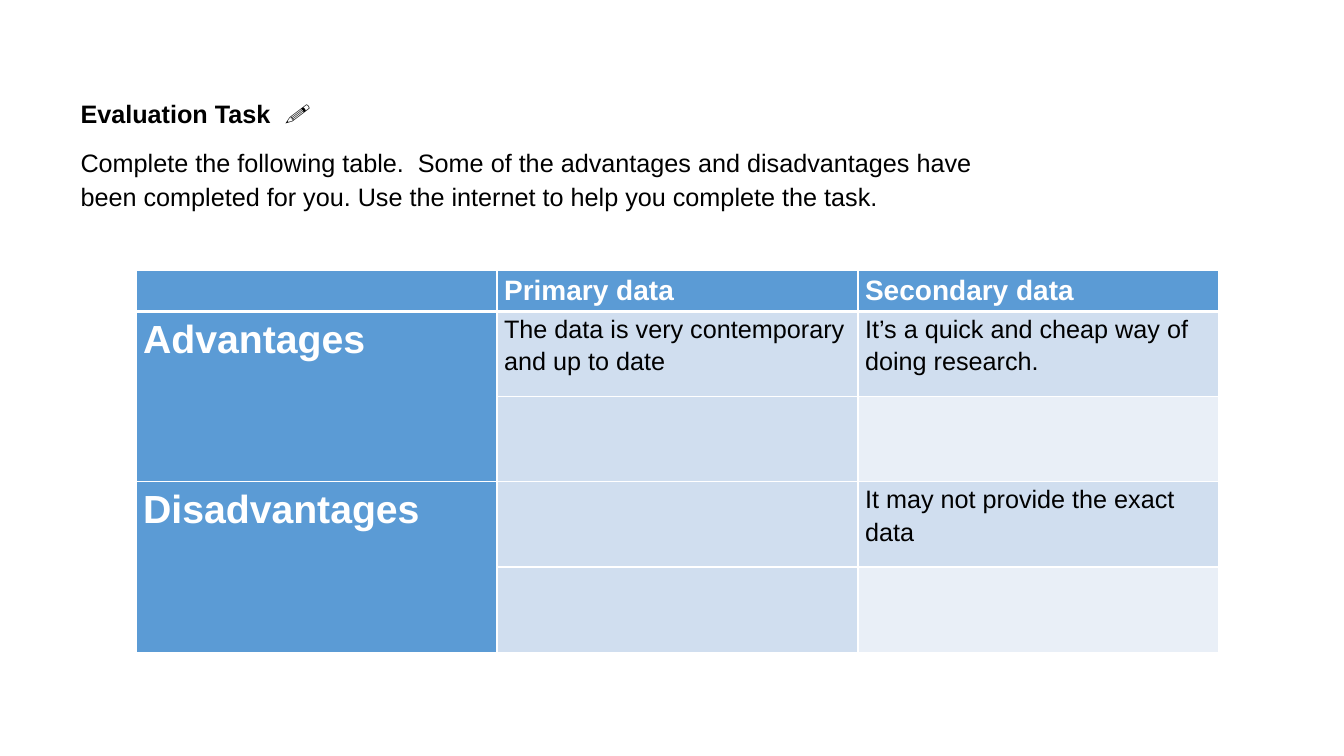
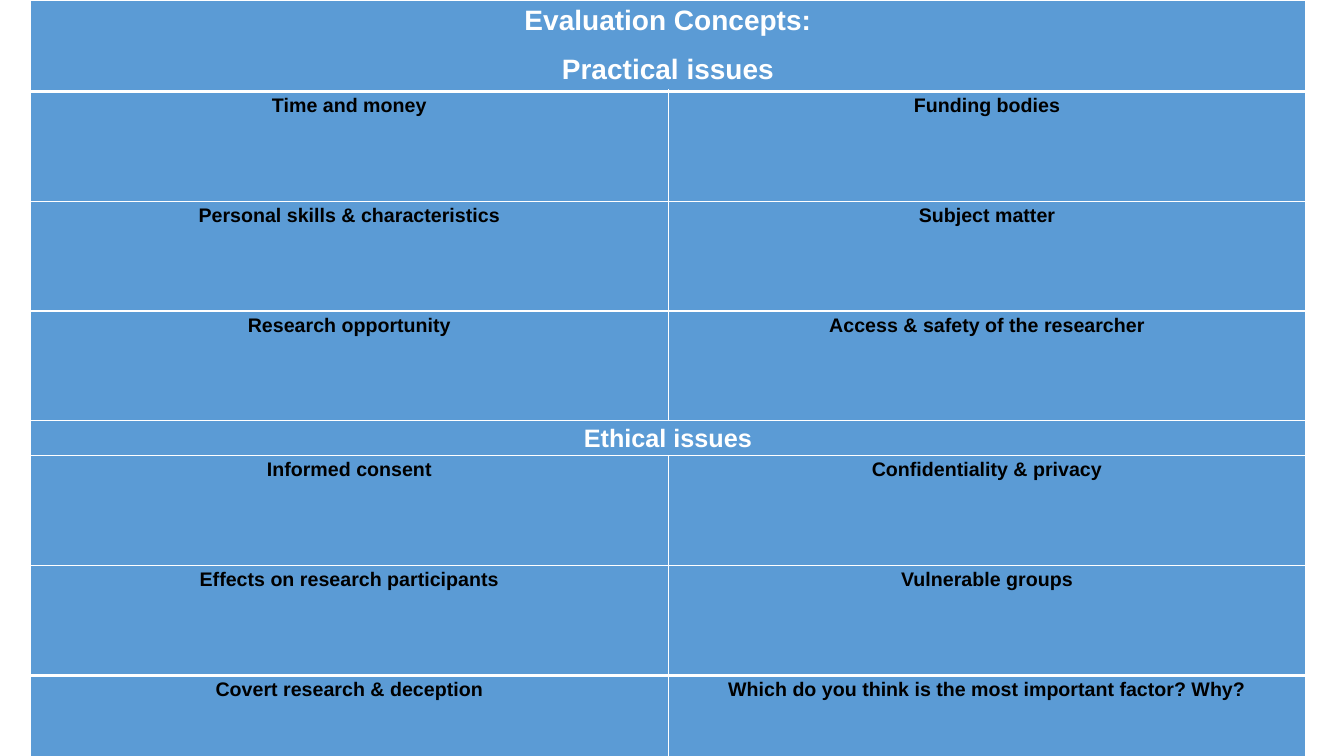
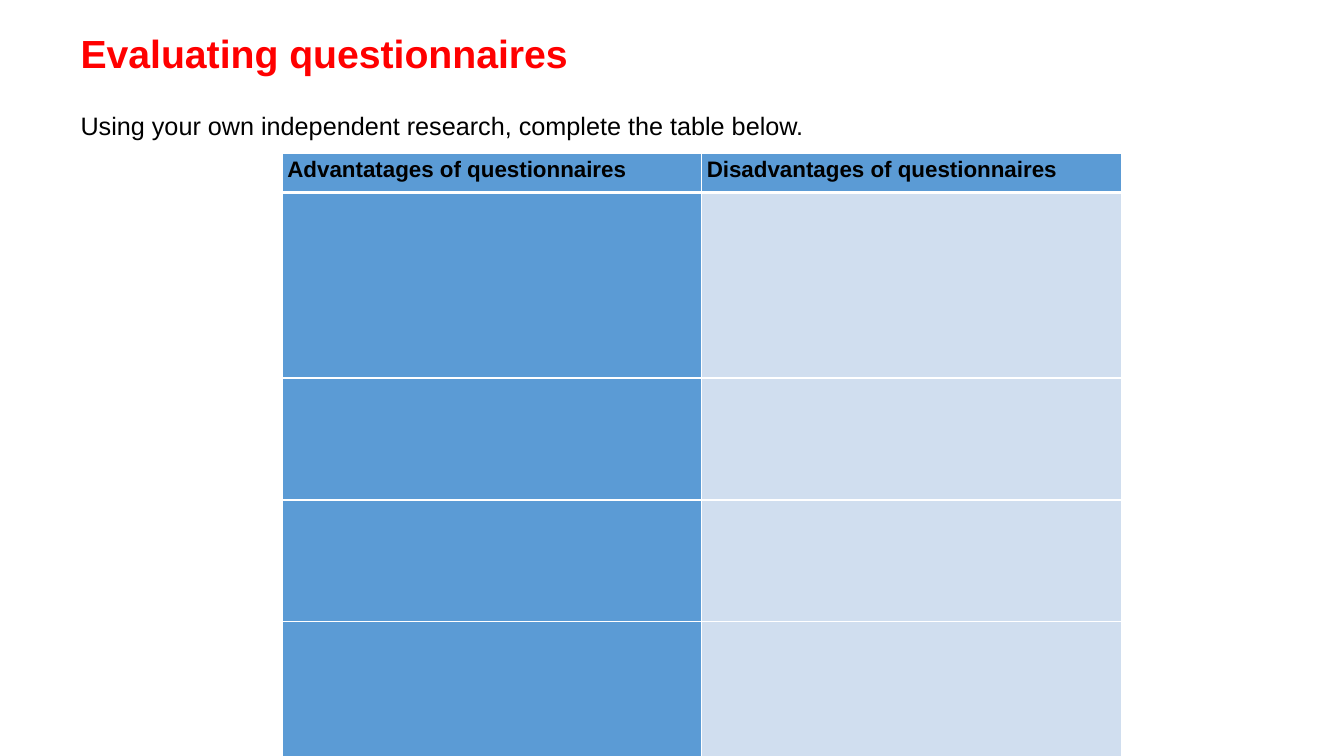
from dataclasses import dataclass

from lxml import etree
from pptx import Presentation
from pptx.dml.color import RGBColor
from pptx.enum import text as text_enum
from pptx.oxml import ns
from pptx.util import Inches, Pt

LEFT = text_enum.PP_ALIGN.LEFT
CENTER = text_enum.PP_ALIGN.CENTER


@dataclass(frozen=True)
class Style:
    size: int
    color: str
    bold: bool = True


class Theme:
    font = "Arial"
    white, black, red = "FFFFFF", "000000", "FF0000"
    blue, light, pale = "5B9BD5", "D0DEEF", "E9EFF7"
    line_spacing = 1.15
    paragraph_gap = 10
    thin_rule, heavy_rule = 1, 3

    title = Style(28, red)
    task = Style(18, black)
    body = Style(18, black, bold=False)
    heading = Style(20, white)
    subheading = Style(18, white)
    row_label = Style(28, white)
    concept = Style(14, black)
    column_label = Style(16, black)


@dataclass(frozen=True)
class Line:
    text: str
    style: Style
    before: int = 0
    spacing: float = Theme.line_spacing


@dataclass(frozen=True)
class Cell:
    fill: str
    lines: tuple = ()


def write(frame, lines, align=LEFT):
    for index, line in enumerate(lines):
        paragraph = frame.paragraphs[0] if index == 0 else frame.add_paragraph()
        paragraph.text = line.text
        paragraph.alignment = align
        paragraph.line_spacing = line.spacing
        paragraph.space_before = Pt(line.before)
        font = paragraph.font
        font.name = Theme.font
        font.size = Pt(line.style.size)
        font.bold = line.style.bold
        font.color.rgb = RGBColor.from_string(line.style.color)


def add_intro(slide, left, top, width, height, lines):
    box = slide.shapes.add_textbox(
        Inches(left), Inches(top), Inches(width), Inches(height))
    box.text_frame.word_wrap = True
    box.text_frame.auto_size = text_enum.MSO_AUTO_SIZE.SHAPE_TO_FIT_TEXT
    write(box.text_frame, lines)


def set_borders(cell, top, bottom):
    """Rule all four sides in white; top and bottom are widths in points."""
    properties = cell._tc.get_or_add_tcPr()
    widths = {"L": Theme.thin_rule, "R": Theme.thin_rule, "T": top, "B": bottom}
    for side, width in widths.items():
        line = etree.SubElement(properties, ns.qn(f"a:ln{side}"), w=str(Pt(width)))
        fill = etree.SubElement(line, ns.qn("a:solidFill"))
        etree.SubElement(fill, ns.qn("a:srgbClr"), val=Theme.white)


def add_grid(slide, left, top, widths, heights, rows, inset,
             align=LEFT, heavy=(1,), merges=()):
    """Draw a table; heavy lists the rows with a thick rule above them."""
    table = slide.shapes.add_table(
        len(heights), len(widths), Inches(left), Inches(top),
        Inches(sum(widths)), Inches(sum(heights))).table
    table.first_row = table.horz_banding = False
    for column, width in zip(table.columns, widths):
        column.width = Inches(width)
    for row, height in zip(table.rows, heights):
        row.height = Inches(height)

    def rule(row_index):
        return Theme.heavy_rule if row_index in heavy else Theme.thin_rule

    for row_index, row in enumerate(rows):
        for column_index, content in enumerate(row):
            cell = table.cell(row_index, column_index)
            set_borders(cell, rule(row_index), rule(row_index + 1))
            cell.fill.solid()
            cell.fill.fore_color.rgb = RGBColor.from_string(content.fill)
            if content.lines:
                cell.margin_left = cell.margin_right = Inches(inset)
                cell.margin_top = cell.margin_bottom = 0
                write(cell.text_frame, content.lines, align)
    for first, last in merges:
        table.cell(*first).merge(table.cell(*last))


def text_cell(text, style, fill=Theme.blue):
    return Cell(fill, (Line(text, style),))


def build_task_slide(slide):
    add_intro(slide, 0.7, 0.88, 9.08, 1.26, [
        Line("Evaluation Task  🖉", Theme.task),
        Line("Complete the following table.  Some of the advantages and "
             "disadvantages have been completed for you. Use the internet "
             "to help you complete the task.", Theme.body, Theme.paragraph_gap),
    ])
    blue, light, pale = Cell(Theme.blue), Cell(Theme.light), Cell(Theme.pale)

    def answer(text):
        return text_cell(text, Theme.body, Theme.light)

    rows = [
        [blue, text_cell("Primary data", Theme.heading),
         text_cell("Secondary data", Theme.heading)],
        [text_cell("Advantages", Theme.row_label),
         answer("The data is very contemporary and up to date"),
         answer("It’s a quick and cheap way of doing research.")],
        [blue, light, pale],
        [text_cell("Disadvantages", Theme.row_label), light,
         answer("It may not provide the exact data")],
        [blue, light, pale],
    ]
    add_grid(slide, 1.35, 2.68, [3.58] * 3, [0.41] + [0.845] * 4, rows, 0.07,
             merges=[((1, 0), (2, 0)), ((3, 0), (4, 0))])


def build_concepts_slide(slide):
    practical = [
        ("Time and money", "Funding bodies"),
        ("Personal skills & characteristics", "Subject matter"),
        ("Research opportunity", "Access & safety of the researcher"),
    ]
    ethical = [
        ("Informed consent", "Confidentiality & privacy"),
        ("Effects on research participants", "Vulnerable groups"),
        ("Covert research & deception",
         "Which do you think is the most important factor? Why?"),
    ]

    def concept_rows(pairs):
        return [[text_cell(text, Theme.concept) for text in pair] for pair in pairs]

    heading = Cell(Theme.blue, (
        Line("Evaluation Concepts:", Theme.heading),
        Line("Practical issues", Theme.heading, Theme.paragraph_gap)))
    rows = [
        [heading, Cell(Theme.blue)],
        *concept_rows(practical),
        [text_cell("Ethical issues", Theme.subheading), Cell(Theme.blue)],
        *concept_rows(ethical),
    ]
    concept_heights = [1.09] * 3
    add_grid(slide, 0.3, 0, [6.33, 6.32],
             [0.85, *concept_heights, 0.32, *concept_heights], rows, 0.06,
             align=CENTER, heavy=(1, 7),
             merges=[((0, 0), (0, 1)), ((4, 0), (4, 1))])


def build_questionnaire_slide(slide):
    add_intro(slide, 0.7, 0.17, 8.85, 1.29, [
        Line("Evaluating questionnaires", Theme.title),
        Line("Using your own independent research, complete the table below.",
             Theme.body, before=24, spacing=1),
    ])
    labels = ["Advantatages of questionnaires", "Disadvantages of questionnaires"]
    heights = [0.39, 1.84, 1.21, 1.21, 1.38]
    rows = [[text_cell(label, Theme.column_label) for label in labels]]
    rows += [[Cell(Theme.blue), Cell(Theme.light)] for _ in heights[1:]]
    add_grid(slide, 2.8, 1.52, [4.16] * 2, heights, rows, 0.05)


def main():
    presentation = Presentation()
    presentation.slide_width = Inches(13.33)
    presentation.slide_height = Inches(7.5)
    blank = presentation.slide_layouts[6]
    for build in (build_task_slide, build_concepts_slide, build_questionnaire_slide):
        build(presentation.slides.add_slide(blank))
    presentation.save("out.pptx")


if __name__ == "__main__":
    main()
